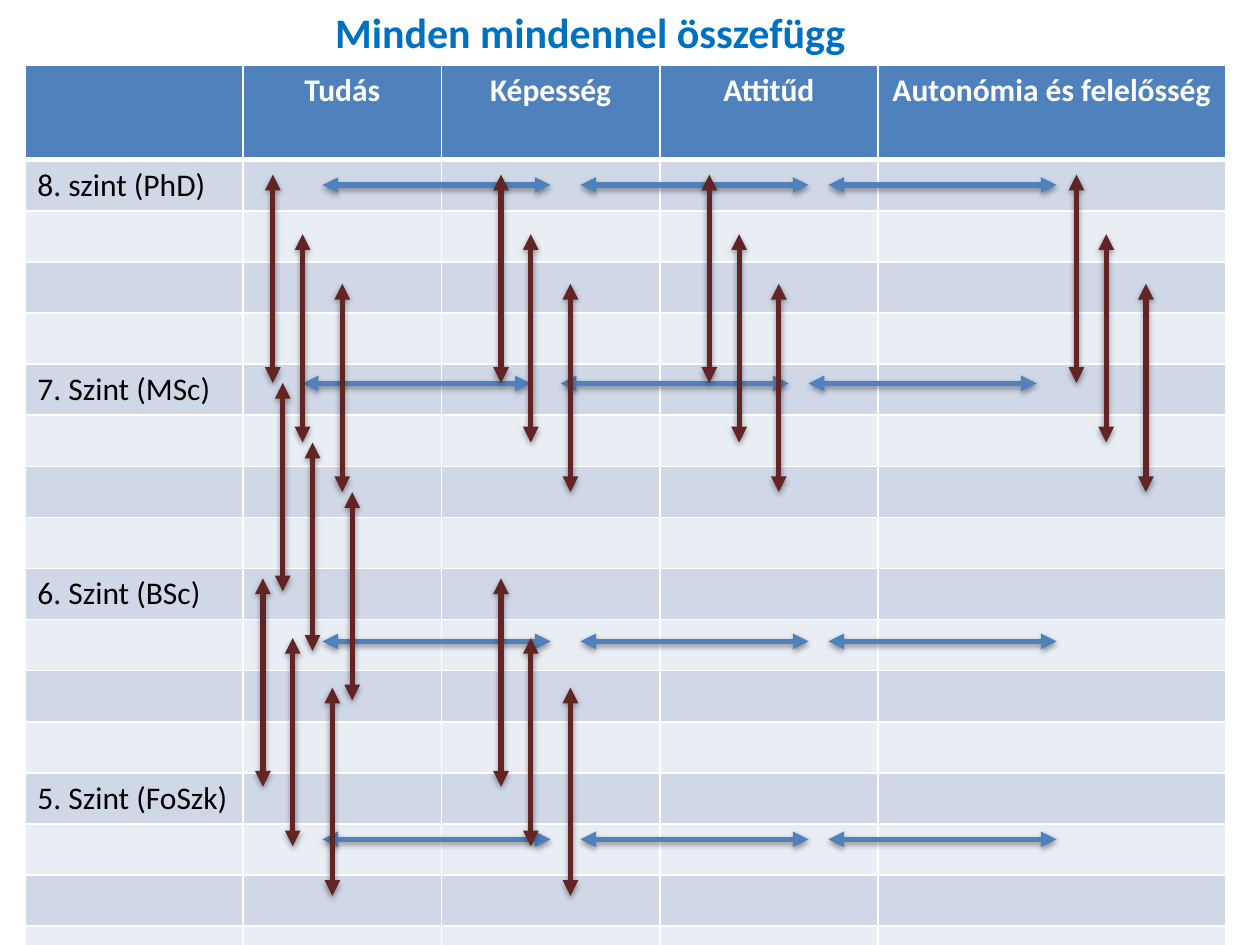
from lxml import etree
from pptx import Presentation
from pptx.dml.color import RGBColor
from pptx.enum.shapes import MSO_CONNECTOR
from pptx.enum.text import MSO_ANCHOR, PP_ALIGN
from pptx.oxml import parse_xml
from pptx.oxml.ns import nsdecls, qn
from pptx.util import Inches, Pt

STRAIGHT = MSO_CONNECTOR.STRAIGHT
TOP = MSO_ANCHOR.TOP
LEFT, CENTER = PP_ALIGN.LEFT, PP_ALIGN.CENTER
TITLE_ONLY = 5

COLORS = {
    "title": "0070C0", "header": "4F81BD", "band_dark": "D0D8E8",
    "band_light": "E9EDF4", "white": "FFFFFF", "text": "000000",
    "across": "4F81BD", "down": "632523",
}

# The page is a grid of 254 columns by 190.5 rows
GRID_COLUMNS, GRID_ROWS = 254, 190.5

HEADERS = ["", "Tudás", "Képesség", "Attitűd", "Autonómia és felelősség"]
LEVELS = {1: "8. szint (PhD)", 5: "7. Szint (MSc)",
          9: "6. Szint (BSc)", 13: "5. Szint (FoSzk)"}
COLUMN_WIDTHS = [44, 40, 44, 44, 70]
ROW_HEIGHTS = [19] + [10.2] * 15 + [20.3]

# Arrows across: start column and row of each group of three
ACROSS_GROUPS = [(65, 37.3), (61, 77.3), (65, 129.3), (65, 169.2)]
ACROSS_STEPS = [(0, 0), (52, 0), (102, 0)]
ACROSS_LENGTH = 46

# Arrows down: top of each staircase of three
DOWN_GROUPS = [(55, 35.2), (101, 35.2), (143, 35.2), (217, 35.2),
               (53, 116.6), (101, 116.6), (57, 77.2)]
DOWN_STEPS = [(0, 0), (6, 12), (14, 22)]
DOWN_LENGTH = 42


def write_text(frame, text, size=18, color="text", bold=False, align=LEFT):
    para = frame.paragraphs[0]
    para.alignment = align
    span = para.add_run()
    span.text = text
    span.font.name = "Calibri"
    span.font.size = Pt(size)
    span.font.bold = bold
    span.font.color.rgb = RGBColor.from_string(COLORS[color])


class Page:
    def __init__(self, deck):
        self.deck = deck
        self.slide = deck.slides.add_slide(deck.slide_layouts[TITLE_ONLY])

    def x(self, columns):
        return round(self.deck.slide_width * columns / GRID_COLUMNS)

    def y(self, rows):
        return round(self.deck.slide_height * rows / GRID_ROWS)

    def title(self, text, left, top, width, height):
        box = self.slide.shapes.title
        box.left, box.top = self.x(left), self.y(top)
        box.width, box.height = self.x(width), self.y(height)
        box.text_frame.vertical_anchor = TOP
        write_text(box.text_frame, text, size=24, color="title", bold=True)

    def cell_borders(self, cell, bottom):
        properties = cell._tc.get_or_add_tcPr()
        widths = {"lnL": 1, "lnR": 1, "lnT": 1, "lnB": bottom}
        for index, (side, width) in enumerate(widths.items()):
            properties.insert(index, parse_xml(
                f'<a:{side} {nsdecls("a")} w="{Pt(width)}"><a:solidFill>'
                f'<a:srgbClr val="{COLORS["white"]}"/></a:solidFill></a:{side}>'))

    def table(self, left, top):
        table = self.slide.shapes.add_table(
            len(ROW_HEIGHTS), len(COLUMN_WIDTHS), self.x(left), self.y(top),
            self.x(sum(COLUMN_WIDTHS)), self.y(sum(ROW_HEIGHTS))).table
        for column, width in zip(table.columns, COLUMN_WIDTHS):
            column.width = self.x(width)
        for index, (row, height) in enumerate(zip(table.rows, ROW_HEIGHTS)):
            row.height = self.y(height)
            is_header = index == 0
            band = "band_dark" if index % 2 else "band_light"
            texts = HEADERS if is_header else [LEVELS.get(index, "")] + [""] * 4
            for cell, text in zip(row.cells, texts):
                cell.fill.solid()
                cell.fill.fore_color.rgb = RGBColor.from_string(
                    COLORS["header" if is_header else band])
                self.cell_borders(cell, bottom=3 if is_header else 1)
                if text:
                    write_text(cell.text_frame, text, bold=is_header,
                               color="white" if is_header else "text",
                               align=CENTER if is_header else LEFT)

    def arrow(self, shapes, start, end, color):
        arrow = shapes.add_connector(
            STRAIGHT, self.x(start[0]), self.y(start[1]),
            self.x(end[0]), self.y(end[1]))
        arrow.line.width = Pt(3)
        arrow.line.color.rgb = RGBColor.from_string(COLORS[color])
        line = arrow.line._get_or_add_ln()
        for name in ("a:headEnd", "a:tailEnd"):
            etree.SubElement(line, qn(name), type="triangle")
        arrow._element.spPr.append(parse_xml(
            f'<a:effectLst {nsdecls("a")}><a:outerShdw blurRad="40000" '
            'dist="20000" dir="5400000" rotWithShape="0">'
            '<a:srgbClr val="000000"><a:alpha val="38000"/></a:srgbClr>'
            '</a:outerShdw></a:effectLst>'))

    def arrow_group(self, origin, steps, color, across=0, down=0):
        """Three equal arrows; they start at the right or the bottom end."""
        group = self.slide.shapes.add_group_shape()
        for step_x, step_y in steps:
            left, top = origin[0] + step_x, origin[1] + step_y
            self.arrow(group.shapes, (left, top + down),
                       (left + across, top), color)


def main():
    deck = Presentation()
    deck.slide_width, deck.slide_height = Inches(10), Inches(7.5)
    page = Page(deck)

    # Levels and competences
    page.table(5, 13.2)

    # Links between competences
    for origin in ACROSS_GROUPS:
        page.arrow_group(origin, ACROSS_STEPS, "across", across=ACROSS_LENGTH)

    # Links between levels
    for origin in DOWN_GROUPS:
        page.arrow_group(origin, DOWN_STEPS, "down", down=DOWN_LENGTH)

    # Title
    page.title("Minden mindennel összefügg", 65, 0, 110, 12.7)

    deck.save("out.pptx")


if __name__ == "__main__":
    main()
